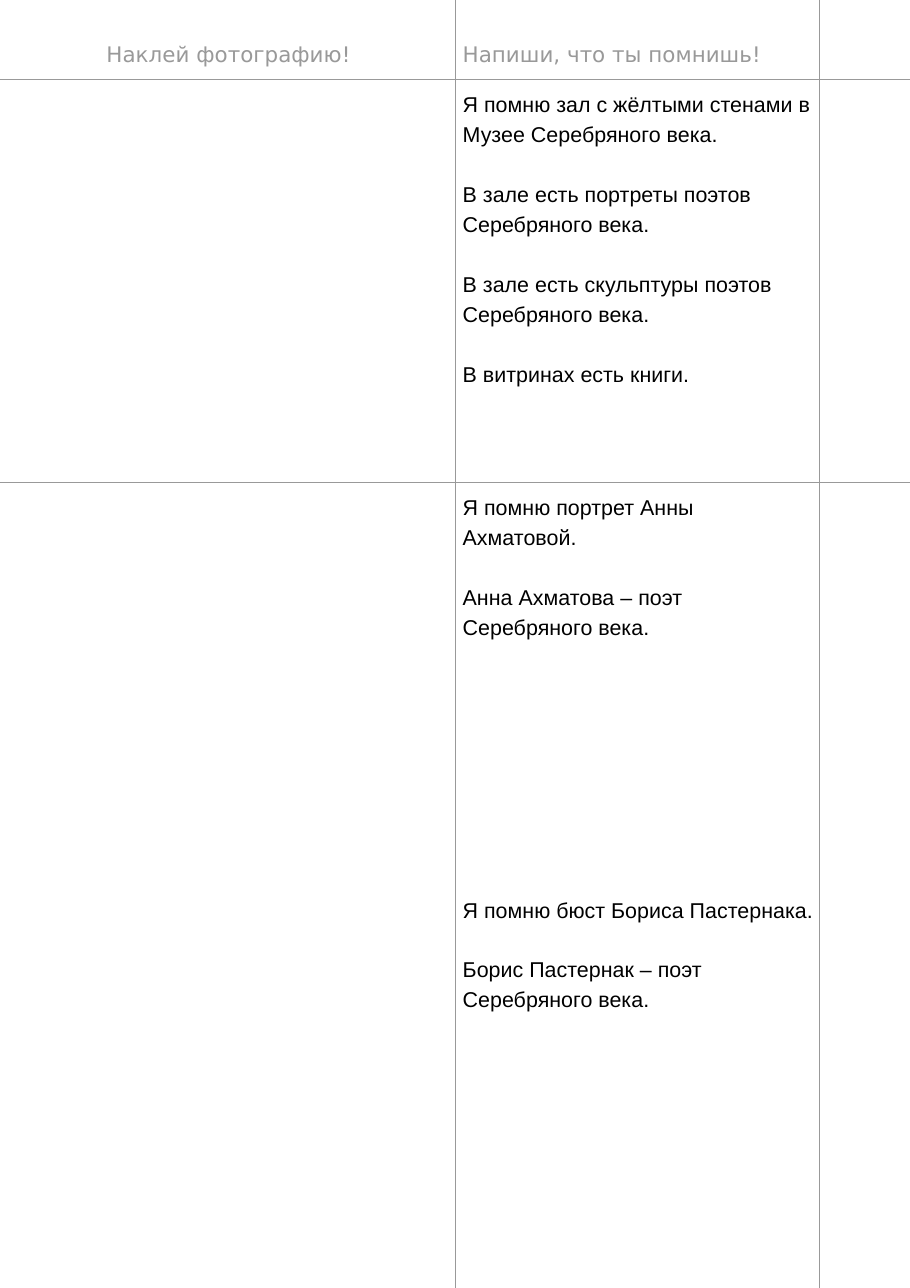
"""Build a memory worksheet: a ruled table for photos and recollections."""
from lxml import etree
from pptx import Presentation
from pptx.dml.color import RGBColor
from pptx.enum.text import MSO_ANCHOR, PP_ALIGN
from pptx.oxml.ns import qn
from pptx.util import Inches, Pt

TOP, LEFT, CENTER = MSO_ANCHOR.TOP, PP_ALIGN.LEFT, PP_ALIGN.CENTER
WIDTH, HEIGHT = Inches(8.26), Inches(11.69)
COLORS = {"rule": "999999", "header": "999999", "text": "000000", "paper": "FFFFFF"}
COLUMNS = [0.5, 0.4, 0.1]
HEADER_SHARE = 0.0615
HEADERS = ["Наклей фотографию!", "Напиши, что ты помнишь!"]
MEMORIES = [
    [
        "Я помню зал с жёлтыми стенами в Музее Серебряного века.",
        "В зале есть портреты поэтов Серебряного века.",
        "В зале есть скульптуры поэтов Серебряного века.",
        "В витринах есть книги.",
    ],
    ["Я помню портрет Анны Ахматовой.", "Анна Ахматова – поэт Серебряного века."],
    ["Я помню бюст Бориса Пастернака.", "Борис Пастернак – поэт Серебряного века."],
]
RULED_ROWS = 2


class Worksheet:
    """Hold the text style and the current slide."""

    size, leading, rule = Pt(14), Pt(19.6), Pt(0.53)

    def __init__(self, prs):
        self.slide = prs.slides.add_slide(prs.slide_layouts[6])

    def table(self, columns, rows):
        """Add a full-slide table from shares of width and height."""
        frame = self.slide.shapes.add_table(len(rows), len(columns), 0, 0, WIDTH, HEIGHT)
        table = frame.table
        table.first_row = table.horz_banding = False
        for column, share in zip(table.columns, columns):
            column.width = int(WIDTH * share)
        for row, share in zip(table.rows, rows):
            row.height = int(HEIGHT * share)
        return table

    def borders(self, cell, sides):
        """Rule the named sides of a cell and clear the others."""
        tc_pr = cell._tc.get_or_add_tcPr()
        for side in "LRTB":
            ln = etree.SubElement(tc_pr, qn(f"a:ln{side}"), w=str(int(self.rule)))
            if side in sides:
                fill = etree.SubElement(ln, qn("a:solidFill"))
                etree.SubElement(fill, qn("a:srgbClr"), val=COLORS["rule"])
            else:
                etree.SubElement(ln, qn("a:noFill"))

    def paper(self, cell):
        """Fill a cell with the paper colour."""
        cell.fill.solid()
        cell.fill.fore_color.rgb = RGBColor.from_string(COLORS["paper"])

    def text(self, cell, lines, font, color, align=LEFT, top=0.07):
        """Write spaced paragraphs into a cell."""
        cell.vertical_anchor = TOP
        cell.margin_left = cell.margin_bottom = Inches(0.07)
        cell.margin_right, cell.margin_top = Inches(0.05), Inches(top)
        tf = cell.text_frame
        tf.text = "\n".join(lines)
        for i, p in enumerate(tf.paragraphs):
            p.alignment = align
            p.line_spacing = self.leading
            if i:
                p.space_before = self.leading
            for r in p.runs:
                r.font.name, r.font.size = font, self.size
                r.font.color.rgb = RGBColor.from_string(COLORS[color])


def main():
    """Draw the worksheet and save it."""
    prs = Presentation()
    prs.slide_width, prs.slide_height = WIDTH, HEIGHT
    sheet = Worksheet(prs)
    body_share = (1 - HEADER_SHARE) / len(MEMORIES)
    table = sheet.table(COLUMNS, [HEADER_SHARE] + [body_share] * len(MEMORIES))
    last = len(COLUMNS) - 1
    for row in range(len(table.rows)):
        for col in range(len(COLUMNS)):
            sides = "L" * (col > 0) + "R" * (col < last)
            sides += "T" * (0 < row <= RULED_ROWS) + "B" * (row < RULED_ROWS)
            cell = table.cell(row, col)
            sheet.borders(cell, sides)
            sheet.paper(cell)
    for col, (header, align) in enumerate(zip(HEADERS, (CENTER, LEFT))):
        sheet.text(table.cell(0, col), [header], "DejaVu Sans", "header", align, top=0.34)
    for row, lines in enumerate(MEMORIES, 1):
        sheet.text(table.cell(row, 1), lines, "Arial", "text")
    prs.save("out.pptx")


if __name__ == "__main__":
    main()
